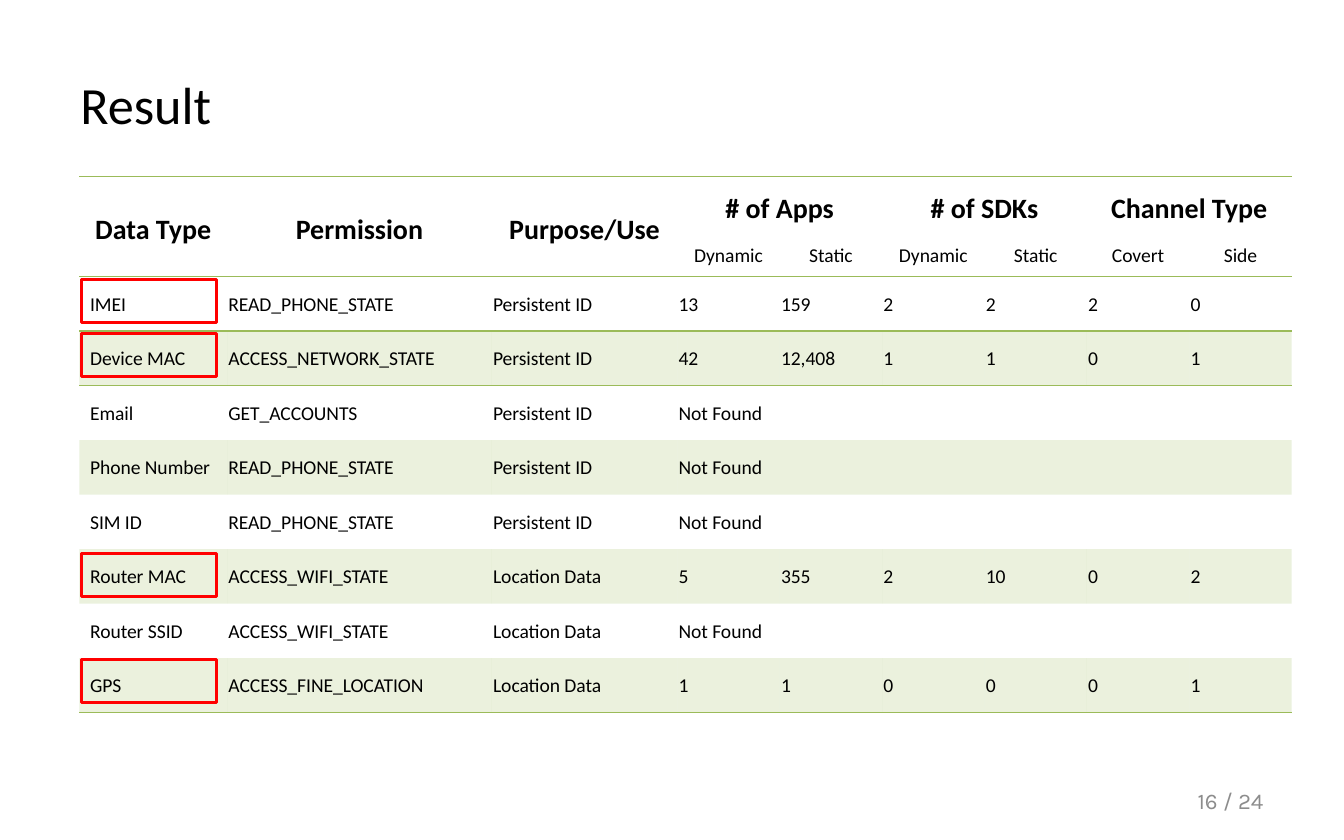
from dataclasses import dataclass

from lxml import etree
from pptx import Presentation
from pptx import util as u
from pptx.dml import color
from pptx.enum import shapes, text
from pptx.oxml import ns

GREEN, WHITE, BLACK, RED, GRAY = "9BBB59", "FFFFFF", "000000", "FF0000", "8C8C8C"
PLAIN_TABLE = "{2D5ABB26-0587-4C30-8999-92F81FD0307C}"
LEFT, CENTER, RIGHT = text.PP_ALIGN.LEFT, text.PP_ALIGN.CENTER, text.PP_ALIGN.RIGHT
MIDDLE = text.MSO_ANCHOR.MIDDLE


@dataclass(frozen=True)
class Style:
    size: float
    font: str = "Calibri"
    ink: str = BLACK
    bold: bool = False
    align: int = LEFT


@dataclass(frozen=True)
class Area:
    left: float
    top: float
    width: float
    height: float

    def points(self) -> list:
        return [u.Pt(n) for n in (self.left, self.top, self.width, self.height)]


TITLE = Style(28)
HEADING = Style(15, bold=True, align=CENTER)
SUBHEADING = Style(10.5, align=CENTER)
BODY = Style(10.5)
PAGE_NUMBER = Style(12, font="Karla", ink=GRAY, align=RIGHT)

HEADINGS = ["Data Type", "Permission", "Purpose/Use"]
GROUPS = {
    "# of Apps": ("Dynamic", "Static"),
    "# of SDKs": ("Dynamic", "Static"),
    "Channel Type": ("Covert", "Side"),
}
FINDINGS = [
    ("IMEI", "READ_PHONE_STATE", "Persistent ID", "13", "159", "2", "2", "2", "0"),
    ("Device MAC", "ACCESS_NETWORK_STATE", "Persistent ID", "42", "12,408", "1", "1", "0", "1"),
    ("Email", "GET_ACCOUNTS", "Persistent ID", "Not Found"),
    ("Phone Number", "READ_PHONE_STATE", "Persistent ID", "Not Found"),
    ("SIM ID", "READ_PHONE_STATE", "Persistent ID", "Not Found"),
    ("Router MAC", "ACCESS_WIFI_STATE", "Location Data", "5", "355", "2", "10", "0", "2"),
    ("Router SSID", "ACCESS_WIFI_STATE", "Location Data", "Not Found"),
    ("GPS", "ACCESS_FINE_LOCATION", "Location Data", "1", "1", "0", "0", "0", "1"),
]
COLUMN_WIDTHS = [79.2, 141.8, 99.4] + [54.86] * 6
ROW_HEIGHTS = [31.7, 22] + [29.2] * len(FINDINGS)
TABLE = Area(42.5, 94.5, sum(COLUMN_WIDTHS), sum(ROW_HEIGHTS))
HIGHLIGHT_TOPS = [149.8, 178.6, 296.6, 353.5]


def rgb(value: str) -> color.RGBColor:
    return color.RGBColor.from_string(value)


def assign(target, values: dict) -> None:
    for name, value in values.items():
        setattr(target, name, value)


def write(frame, words: str, style: Style) -> None:
    para = frame.paragraphs[0]
    para.alignment = style.align
    span = para.add_run()
    span.text = words
    assign(span.font, {"name": style.font, "size": u.Pt(style.size), "bold": style.bold})
    span.font.color.rgb = rgb(style.ink)


def add_text(page, area: Area, words: str, style: Style) -> None:
    frame = page.shapes.add_textbox(*area.points()).text_frame
    assign(frame, {"word_wrap": True, "vertical_anchor": MIDDLE})
    write(frame, words, style)


def fill_cell(cell, tint: str | None) -> None:
    if tint is None:
        cell.fill.background()
        return
    cell.fill.solid()
    cell.fill.fore_color.rgb = rgb(tint)
    for swatch in cell._tc.tcPr.iter(ns.qn("a:srgbClr")):
        etree.SubElement(swatch, ns.qn("a:alpha"), val="20000")


def rule_cell(cell, sides: list[str]) -> None:
    for place, side in enumerate(sides):
        line = etree.Element(ns.qn(f"a:{side}"), w=str(u.Pt(1)))
        fill = etree.SubElement(line, ns.qn("a:solidFill"))
        etree.SubElement(fill, ns.qn("a:srgbClr"), val=GREEN)
        cell._tc.get_or_add_tcPr().insert(place, line)


def set_cell(cell, words: str, style: Style, margins: tuple) -> None:
    names = ("margin_left", "margin_top", "margin_right", "margin_bottom")
    assign(cell, {name: u.Pt(size) for name, size in zip(names, margins)})
    cell.vertical_anchor = MIDDLE
    write(cell.text_frame, words, style)


def add_header(table) -> None:
    margins = (7.2, 3.6, 7.2, 0)
    for column, words in enumerate(HEADINGS):
        table.cell(0, column).merge(table.cell(1, column))
        set_cell(table.cell(0, column), words, HEADING, margins)
    for group, (words, parts) in enumerate(GROUPS.items()):
        column = len(HEADINGS) + 2 * group
        table.cell(0, column).merge(table.cell(0, column + 1))
        set_cell(table.cell(0, column), words, HEADING, margins)
        for offset, part in enumerate(parts):
            set_cell(table.cell(1, column + offset), part, SUBHEADING, (7.2, 3.6, 7.2, 3.6))


def add_findings(table) -> None:
    last = len(COLUMN_WIDTHS) - 1
    for row, finding in enumerate(FINDINGS, start=2):
        if len(finding) <= last:
            table.cell(row, len(finding) - 1).merge(table.cell(row, last))
        for column, words in enumerate(finding):
            inset = 0.7 if column else 5.8
            set_cell(table.cell(row, column), words, BODY, (inset, 0.7, 0.7, 0))


def paint_table(table) -> None:
    bottom = len(ROW_HEIGHTS) - 1
    for row in range(len(ROW_HEIGHTS)):
        for column in range(len(COLUMN_WIDTHS)):
            cell = table.cell(row, column)
            tint = GREEN if row > 1 and row % 2 else None
            if row == 1 and column >= len(HEADINGS):
                tint = WHITE
            fill_cell(cell, tint)
            top = ["lnT"] if row in (0, 2, 3) else []
            under = row in (1, 2, bottom) or (row == 0 and column < len(HEADINGS))
            rule_cell(cell, top + (["lnB"] if under else []))


def add_results(page) -> None:
    frame = page.shapes.add_table(len(ROW_HEIGHTS), len(COLUMN_WIDTHS), *TABLE.points())
    table = frame.table
    assign(table, {"first_row": False, "horz_banding": False})
    for mark in frame.element.iter(ns.qn("a:tableStyleId")):
        mark.text = PLAIN_TABLE
    for column, width in zip(table.columns, COLUMN_WIDTHS):
        column.width = u.Pt(width)
    for row, height in zip(table.rows, ROW_HEIGHTS):
        row.height = u.Pt(height)
    add_header(table)
    add_findings(table)
    paint_table(table)


def add_highlight(page, top: float) -> None:
    box = page.shapes.add_shape(shapes.MSO_SHAPE.RECTANGLE, *Area(43.7, top, 72.4, 23).points())
    box.shadow.inherit = False
    box.fill.background()
    box.line.color.rgb = rgb(RED)
    box.line.width = u.Pt(1.5)


def main() -> None:
    deck = Presentation()
    assign(deck, {"slide_width": u.Pt(720), "slide_height": u.Pt(450)})
    page = deck.slides.add_slide(deck.slide_layouts[6])
    add_text(page, Area(36, 18, 648, 75), "Result", TITLE)
    add_results(page)
    for top in HIGHLIGHT_TOPS:
        add_highlight(page, top)
    add_text(page, Area(516, 417, 168, 24), "16 / 24", PAGE_NUMBER)
    deck.save("out.pptx")


if __name__ == "__main__":
    main()
